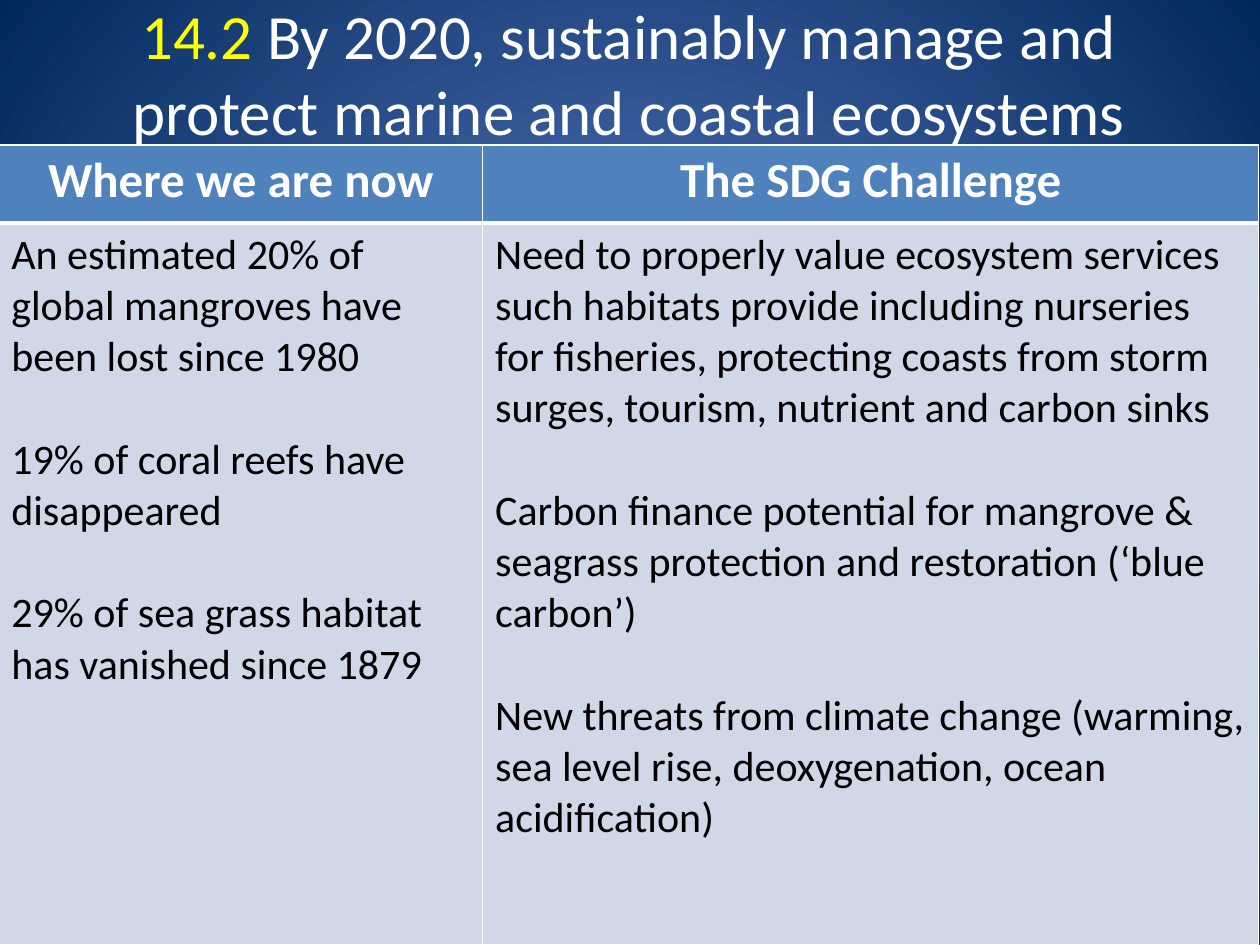
from pptx import Presentation
from pptx.dml.color import RGBColor as RGB
from pptx.enum.text import MSO_ANCHOR as Anchor, PP_ALIGN as Align
from pptx.oxml import parse_xml
from pptx.oxml.ns import nsdecls, qn
from pptx.util import Pt

# Content
TITLE = [
    ("14.2", "mark"),
    (" By 2020, sustainably manage and protect marine and coastal ecosystems", "light"),
]
COLS = [
    ("Where we are now", 276.5, [
        "An estimated 20% of global mangroves have been lost since 1980",
        "19% of coral reefs have disappeared",
        "29% of sea grass habitat has vanished since 1879",
    ]),
    ("The SDG Challenge", 443.5, [
        "Need to properly value ecosystem services such habitats provide including "
        "nurseries for fisheries, protecting coasts from storm surges, tourism, "
        "nutrient and carbon sinks",
        "Carbon finance potential for mangrove & seagrass protection and "
        "restoration (‘blue carbon’)",
        "New threats from climate change (warming, sea level rise, deoxygenation, "
        "ocean acidification)",
    ]),
]
THEME = {
    "font": "Calibri",
    "title": 36, "head": 28, "body": 24, "gap": 29.3,
    "mark": "FFFF00", "light": "FFFFFF", "dark": "000000",
    "glow": "5E7CC5", "edge": "00295C",
    "band": "4F81BD", "cell": "D0D8E8",
}
WIDE, HIGH = 720, 540
TOP, HEAD = 82.8, 44.6


def tint(name):
    return RGB.from_string(THEME[name])


def add_run(para, text, size, color, bold=False):
    run = para.add_run()
    run.text = text
    font = run.font
    font.name, font.size, font.bold = THEME["font"], Pt(THEME[size]), bold
    font.color.rgb = tint(color)


def fill_cell(cell, texts, size, color, back, head):
    # Borders come before the fill in the cell properties
    props = cell._tc.get_or_add_tcPr()
    for side in "LRTB":
        thick = 3 if (side == "B") == head and side in "TB" else 1
        props.append(parse_xml(
            f'<a:ln{side} {nsdecls("a")} w="{Pt(thick)}"><a:solidFill>'
            f'<a:srgbClr val="{THEME["light"]}"/></a:solidFill></a:ln{side}>'))
    cell.fill.solid()
    cell.fill.fore_color.rgb = tint(back)
    frame = cell.text_frame
    for i, text in enumerate(texts):
        para = frame.add_paragraph() if i else frame.paragraphs[0]
        para.alignment = Align.CENTER if head else Align.LEFT
        if i:
            para.space_before = Pt(THEME["gap"])
        add_run(para, text, size, color, head)


def main():
    deck = Presentation()
    deck.slide_width, deck.slide_height = Pt(WIDE), Pt(HIGH)
    slide = deck.slides.add_slide(deck.slide_layouts[6])

    # Radial background
    fill = slide.background.fill
    fill.gradient()
    for stop, name in zip(fill.gradient_stops, ("glow", "edge")):
        stop.color.rgb = tint(name)
    grad = next(slide._element.iter(qn("a:gradFill")))
    grad.replace(grad.find(qn("a:lin")), parse_xml(
        f'<a:path {nsdecls("a")} path="circle">'
        '<a:fillToRect l="50000" t="50000" r="50000" b="50000"/></a:path>'))

    # Title
    frame = slide.shapes.add_textbox(Pt(35.3), Pt(-3.6), Pt(648), Pt(90)).text_frame
    frame.word_wrap = True
    frame.vertical_anchor = Anchor.MIDDLE
    para = frame.paragraphs[0]
    para.alignment = Align.CENTER
    for text, color in TITLE:
        add_run(para, text, "title", color)

    # Table
    table = slide.shapes.add_table(
        2, len(COLS), Pt(-0.7), Pt(TOP), Pt(WIDE), Pt(HIGH - TOP)).table
    table.rows[0].height = Pt(HEAD)
    table.rows[1].height = Pt(HIGH - TOP - HEAD)
    for i, (head, wide, notes) in enumerate(COLS):
        table.columns[i].width = Pt(wide)
        fill_cell(table.cell(0, i), [head], "head", "light", "band", True)
        fill_cell(table.cell(1, i), notes, "body", "dark", "cell", False)

    deck.save("out.pptx")


if __name__ == "__main__":
    main()
